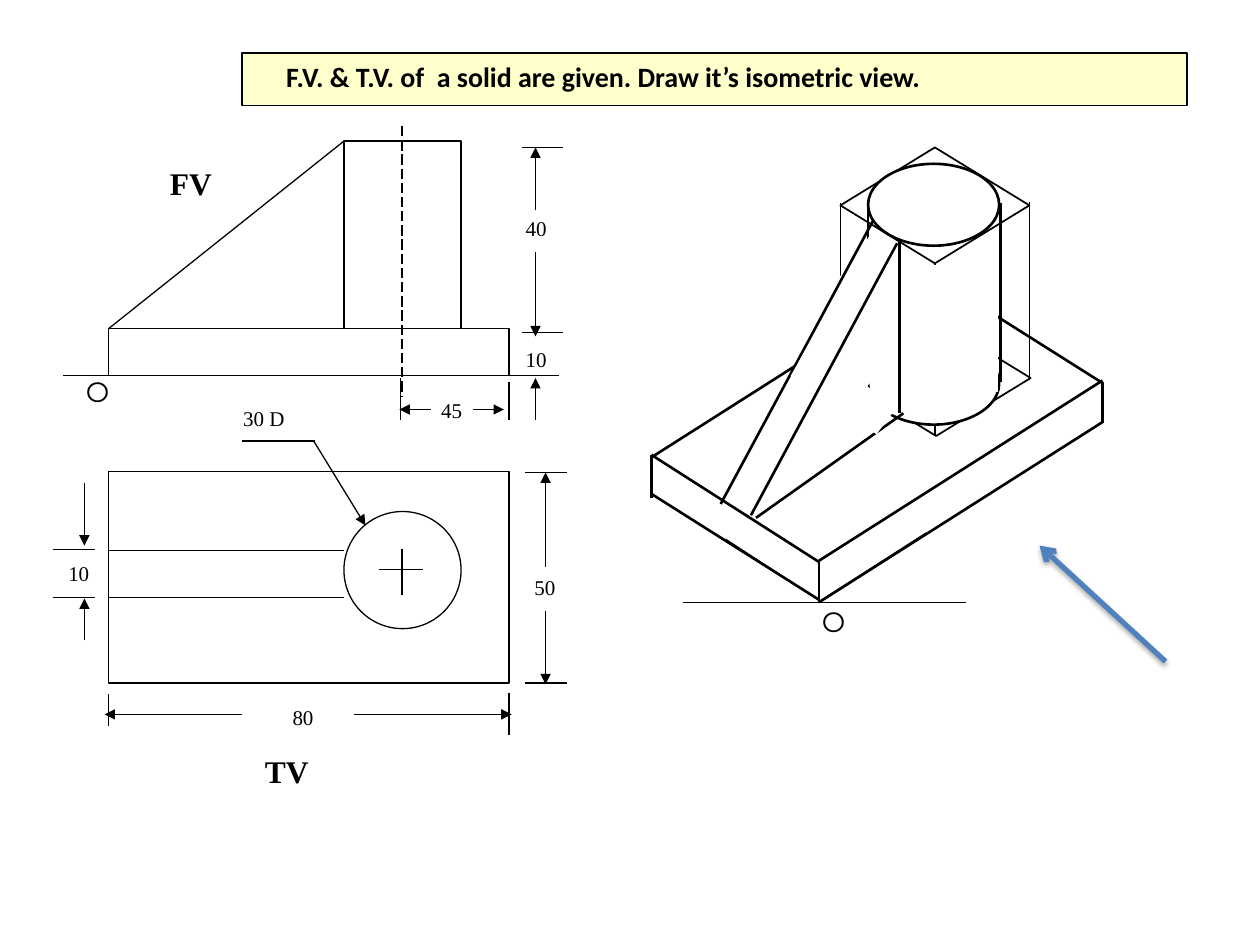
import dataclasses

import lxml.etree
import pptx
import pptx.dml.color
import pptx.enum.dml
import pptx.enum.shapes
import pptx.enum.text
import pptx.oxml.ns
import pptx.util

Inches = pptx.util.Inches
Pt = pptx.util.Pt
Preset = pptx.enum.shapes.MSO_SHAPE
qn = pptx.oxml.ns.qn


@dataclasses.dataclass(frozen=True)
class Theme:
    ink: str = "000000"
    paper: str = "FFFFFF"
    banner: str = "FFFFCC"
    accent: str = "4F81BD"
    thin: float = 0.75
    medium: float = 1
    bold: float = 1.5
    heavy: float = 3
    dimension: int = 12
    origin: int = 16
    title: int = 16
    view: int = 18
    drafting_font: str = "Times New Roman"
    origin_font: str = "Montserrat"
    title_font: str = "Calibri"


THEME = Theme()


def rgb(value):
    return pptx.dml.color.RGBColor.from_string(value)


def add_line(shapes, start, end, weight=THEME.thin, color=THEME.ink,
             arrow=None, dash=None):
    """Draw a shadowless line, with an optional arrowhead at its end."""
    line = shapes.add_connector(
        pptx.enum.shapes.MSO_CONNECTOR.STRAIGHT,
        *(Inches(value) for value in (*start, *end)))
    line.line.color.rgb = rgb(color)
    line.line.width = Pt(weight)
    if dash:
        line.line.dash_style = dash
    properties = line._element.spPr
    if arrow:
        lxml.etree.SubElement(properties.find(qn("a:ln")), qn("a:tailEnd"), type=arrow)
    lxml.etree.SubElement(properties, qn("a:effectLst"))
    return line


def add_lines(shapes, segments, weight=THEME.thin, arrow=None):
    for x1, y1, x2, y2 in segments:
        add_line(shapes, (x1, y1), (x2, y2), weight, arrow=arrow)


def add_outline(shapes, preset, box, weight=THEME.thin, color=THEME.ink, rotation=0):
    """Draw a paper-filled shape, which hides the lines behind it."""
    outline = shapes.add_shape(preset, *(Inches(value) for value in box))
    outline.shadow.inherit = False
    outline.fill.solid()
    outline.fill.fore_color.rgb = rgb(THEME.paper)
    outline.line.color.rgb = rgb(color)
    outline.line.width = Pt(weight)
    outline.rotation = rotation


def add_mask(shapes, preset, box, rotation=0):
    add_outline(shapes, preset, box, color=THEME.paper, rotation=rotation)


def format_text(paragraph, size, font, bold=False):
    for run in paragraph.runs:
        run.font.size = Pt(size)
        run.font.name = font
        run.font.bold = bold
        run.font.color.rgb = rgb(THEME.ink)


def add_label(shapes, text, box, size=THEME.dimension, font=THEME.drafting_font, bold=False):
    label = shapes.add_textbox(*(Inches(value) for value in box))
    frame = label.text_frame
    frame.text = text
    frame.word_wrap = False
    frame.auto_size = pptx.enum.text.MSO_AUTO_SIZE.SHAPE_TO_FIT_TEXT
    frame.paragraphs[0].alignment = pptx.enum.text.PP_ALIGN.CENTER
    format_text(frame.paragraphs[0], size, font, bold)


def add_origin(shapes, left, top):
    add_label(shapes, "O", (left, top, 0.39, 0.37), THEME.origin, THEME.origin_font)


def set_title(title, text):
    title.left, title.top = Inches(1.92), Inches(0.42)
    title.width, title.height = Inches(7.5), Inches(0.42)
    title.fill.solid()
    title.fill.fore_color.rgb = rgb(THEME.banner)
    title.line.color.rgb = rgb(THEME.ink)
    title.line.width = Pt(THEME.thin)
    frame = title.text_frame
    frame.text = text
    frame.auto_size = pptx.enum.text.MSO_AUTO_SIZE.NONE
    frame.vertical_anchor = pptx.enum.text.MSO_ANCHOR.TOP
    frame.margin_left = Inches(0.35)
    frame.margin_top = frame.margin_bottom = Inches(0.05)
    frame.paragraphs[0].alignment = pptx.enum.text.PP_ALIGN.LEFT
    format_text(frame.paragraphs[0], THEME.title, THEME.title_font, bold=True)


def draw_isometric_base(shapes):
    add_lines(shapes, [(6.51, 4.77, 7.35, 4.23), (6.51, 4.77, 5.76, 4.28)])
    add_lines(shapes, [
        (6.5, 4.78, 6.5, 4.45), (6.5, 4.78, 8.75, 3.35), (6.5, 4.45, 8.75, 3.02),
        (6.5, 4.76, 5.17, 3.92), (6.5, 4.46, 5.17, 3.61), (8.75, 3.04, 7.42, 2.2),
        (8.75, 3.36, 8.75, 3.03), (5.17, 3.63, 7.42, 2.2), (5.17, 3.61, 5.17, 3.95),
    ], THEME.bold)


def draw_isometric_cylinder(shapes):
    add_outline(shapes, Preset.DIAMOND, (6.68, 2.54, 1.5, 0.92), THEME.medium)
    add_lines(shapes, [(x, bottom, x, bottom - 1.42)
                       for x, bottom in ((6.67, 3.03), (7.42, 3.45), (8.17, 3.02))])
    add_outline(shapes, Preset.DIAMOND, (6.67, 1.17, 1.5, 0.92), THEME.medium)
    for top in (1.3, 2.72):
        add_outline(shapes, Preset.OVAL, (6.89, top, 1.04, 0.65), THEME.bold)
    add_line(shapes, (6.89, 1.61), (6.89, 3.03))
    add_line(shapes, (7.94, 1.61), (7.94, 3.03), THEME.bold)
    add_mask(shapes, Preset.RECTANGLE, (6.92, 2.11, 1, 1))


def draw_isometric_rib(shapes):
    add_lines(shapes, [(6, 4.11, 7.17, 3.28), (7.14, 1.91, 7.14, 3.28)], THEME.bold)
    add_mask(shapes, Preset.RECTANGLE, (6.51, 3.04, 0.58, 0.25), 37.2)
    add_mask(shapes, Preset.OVAL, (6.58, 2.11, 0.42, 1))
    add_lines(shapes, [(7.12, 1.93, 5.96, 4.09), (6.93, 1.75, 5.72, 4)], THEME.bold)
    add_mask(shapes, Preset.RECTANGLE, (6.59, 1.8, 0.2, 1.32), 29.3)


def draw_views(shapes):
    """Draw the front view above the top view."""
    left, width, axis = 0.86, 3.18, 3.19
    cylinder_left, diameter = 2.73, 0.93
    add_outline(shapes, Preset.RECTANGLE, (cylinder_left, 1.12, diameter, 1.49))
    add_outline(shapes, Preset.RECTANGLE, (left, 2.61, width, 0.37))
    add_line(shapes, (cylinder_left, 1.12), (left, 2.61))
    add_outline(shapes, Preset.RECTANGLE, (left, 3.74, width, 1.68))
    add_outline(shapes, Preset.OVAL, (cylinder_left, 4.06, diameter, diameter))
    add_lines(shapes, [(left, y, cylinder_left, y) for y in (4.37, 4.74)])
    add_line(shapes, (axis, 1), (axis, 3.15), dash=pptx.enum.dml.MSO_LINE.LONG_DASH)
    add_lines(shapes, [(axis, 4.36, axis, 4.72), (3.01, 4.52, 3.36, 4.52),
                       (0.5, 2.98, 4.44, 2.98)])
    add_label(shapes, "FV", (1.25, 1.25, 0.53, 0.4), THEME.view, bold=True)
    add_label(shapes, "TV", (2, 5.92, 0.55, 0.4), THEME.view, bold=True)
    add_origin(shapes, 0.58, 2.92)


def draw_dimensions(shapes):
    extension = 0.33
    add_lines(shapes, [(x, y, x + extension, y) for x, y in (
        (4.14, 2.64), (4.14, 1.17), (4.17, 3.75), (4.17, 5.42), (0.42, 4.36), (0.42, 4.74))])
    add_lines(shapes, [
        (0.86, 5.51, 0.86, 5.76), (4.04, 5.5, 4.04, 5.83), (3.18, 3.33, 3.18, 3),
        (4.04, 3.03, 4.04, 3.33), (1.92, 3.5, 2.5, 3.5)])
    add_lines(shapes, [
        (2.49, 3.5, 2.9, 4.17),
        (4.25, 2, 4.25, 2.67), (4.25, 1.67, 4.25, 1.17), (4.25, 3.33, 4.25, 3),
        (0.67, 3.83, 0.67, 4.33), (0.67, 5.08, 0.67, 4.75),
        (4.33, 4.5, 4.33, 3.75), (4.33, 4.85, 4.33, 5.43),
        (2.81, 5.67, 4.06, 5.67), (1.92, 5.67, 0.83, 5.67),
        (3.75, 3.25, 4, 3.25), (3.42, 3.25, 3.17, 3.25),
    ], arrow="triangle")
    for value, x, y in (("40", 4.07, 1.66), ("10", 4.07, 2.7), ("50", 4.14, 4.51),
                        ("80", 2.22, 5.54), ("10", 0.44, 4.4), ("45", 3.4, 3.11)):
        add_label(shapes, value, (x, y, 0.37, 0.3))
    add_label(shapes, "30 D", (1.83, 3.17, 0.53, 0.3))


def draw_viewing_direction(shapes):
    direction = add_line(shapes, (9.25, 5.25), (8.25, 4.33), THEME.heavy,
                         THEME.accent, arrow="arrow")
    effects = direction._element.spPr.find(qn("a:effectLst"))
    shadow = lxml.etree.SubElement(
        effects, qn("a:outerShdw"), blurRad=str(Pt(3.1)), dist=str(Pt(1.8)),
        dir="5400000", rotWithShape="0")
    shade = lxml.etree.SubElement(shadow, qn("a:srgbClr"), val=THEME.ink)
    lxml.etree.SubElement(shade, qn("a:alpha"), val="35000")


def main():
    presentation = pptx.Presentation()
    presentation.slide_width, presentation.slide_height = Inches(10), Inches(7.5)
    slide = presentation.slides.add_slide(presentation.slide_layouts[5])
    shapes = slide.shapes
    set_title(shapes.title, "F.V. & T.V. of  a solid are given. Draw it’s isometric view.")
    draw_isometric_base(shapes)
    draw_isometric_cylinder(shapes)
    draw_isometric_rib(shapes)
    views = shapes.add_group_shape().shapes
    draw_views(views)
    draw_dimensions(views)
    add_line(shapes, (5.42, 4.78), (7.67, 4.78))
    add_origin(shapes, 6.42, 4.75)
    draw_viewing_direction(shapes)
    presentation.save("out.pptx")


if __name__ == "__main__":
    main()
